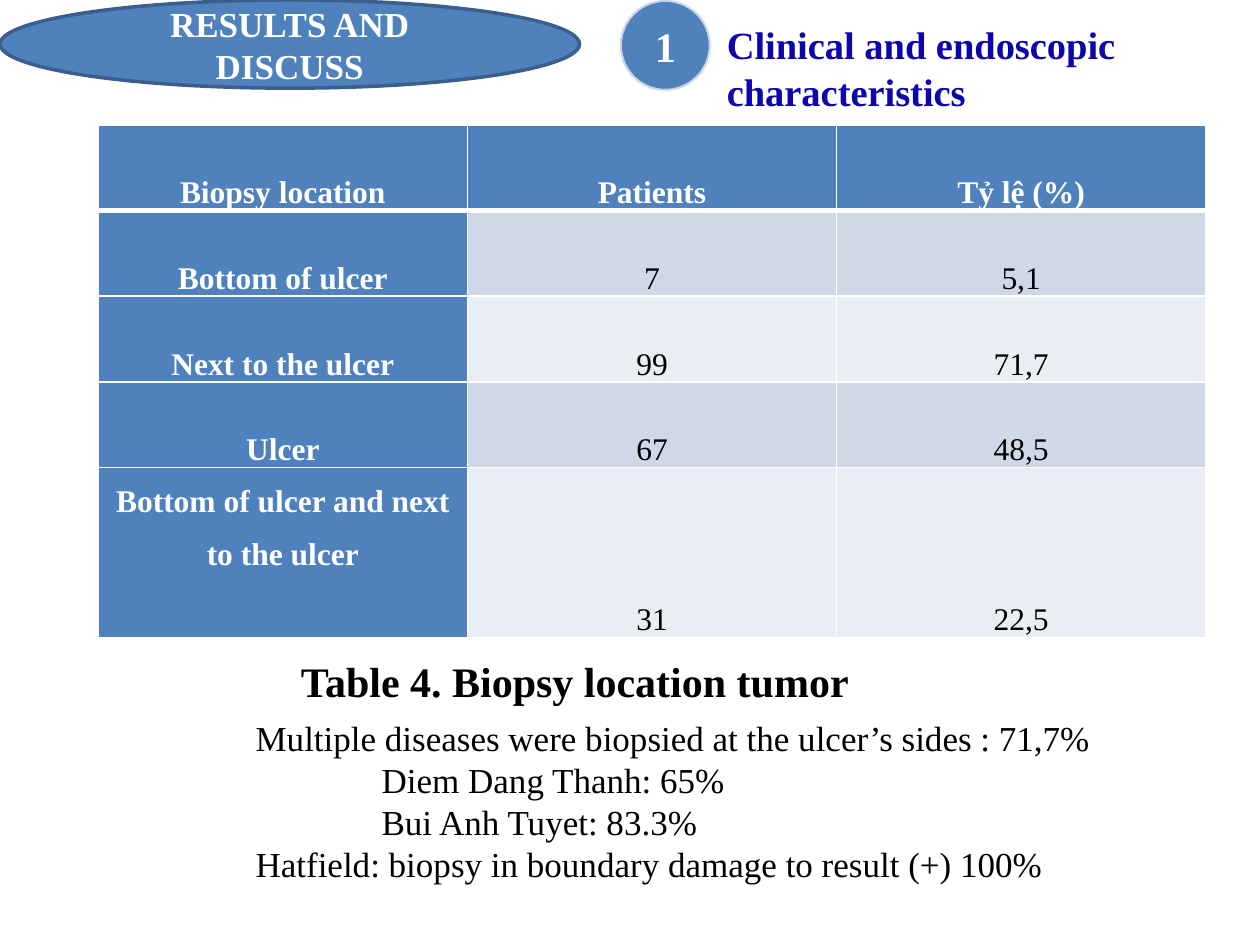
from dataclasses import dataclass, field

from lxml.etree import SubElement
from pptx import Presentation
from pptx.dml.color import RGBColor
from pptx.enum.shapes import MSO_SHAPE as Preset
from pptx.enum.text import MSO_ANCHOR as Anchor, PP_ALIGN as Align
from pptx.oxml.ns import qn
from pptx.util import Inches, Pt

FONT = "Times New Roman"
BLUE, WHITE, BLACK = "4F81BD", "FFFFFF", "000000"
BANDS = ("E9EDF4", "D0D8E8")


@dataclass
class Style:
    size: float
    color: str = BLACK
    bold: bool = False
    paragraph: dict = field(default_factory=dict)


@dataclass
class Block:
    area: tuple
    lines: tuple
    style: Style
    frame: dict = field(default_factory=dict)
    indents: tuple = ()


@dataclass
class Oval:
    block: Block
    line_color: str
    line_width: float
    opacity: int = 100


CENTERED = {"alignment": Align.CENTER}
CELL_SPACING = {**CENTERED, "line_spacing": 1.5, "space_before": Pt(6)}
LABEL = Style(18, WHITE, True, CELL_SPACING)
VALUE = Style(18, BLACK, False, CELL_SPACING)

OVALS = (
    Oval(Block((4.92, 0, 0.72, 0.72), ("1",), Style(24, WHITE, True, CENTERED),
               {"vertical_anchor": Anchor.MIDDLE, "word_wrap": False}),
         "F8F8F8", 2.25, 70),
    Oval(Block((0, 0, 4.6, 0.7), ("RESULTS AND", "DISCUSS"),
               Style(20, WHITE, True, CENTERED),
               {"vertical_anchor": Anchor.MIDDLE, "word_wrap": True}),
         "3A5F8C", 2),
)
TEXTS = (
    Block((2.29, 5.15, 5.98, 0.47), ("Table 4. Biopsy location tumor",),
          Style(24, BLACK, True, {"space_before": Pt(3)})),
    Block((5.67, -0.03, 4.92, 1.21), ("Clinical and endoscopic characteristics",),
          Style(22, "0C04AC", True), {"margin_top": Inches(0.2)}),
    Block((1.93, 5.64, 7.32, 2.46),
          ("Multiple diseases were biopsied at the ulcer’s sides : 71,7%",
           "Diem Dang Thanh: 65%",
           "Bui Anh Tuyet: 83.3%",
           "Hatfield: biopsy in boundary damage to result (+) 100%"),
          Style(20), indents=(0, 1, 1, 0)),
)
ROWS = (
    ("Biopsy location", "Patients", "Tỷ lệ (%)"),
    ("Bottom of ulcer", "7", "5,1"),
    ("Next to the ulcer", "99", "71,7"),
    ("Ulcer", "67", "48,5"),
    ("Bottom of ulcer and next to the ulcer", "31", "22,5"),
)
ROW_HEIGHTS = (0.68, 0.68, 0.68, 0.68, 1.35)
COLUMN_WIDTH = 2.93


def rgb(value: str) -> RGBColor:
    return RGBColor.from_string(value)


def apply(target, values: dict) -> None:
    for name, value in values.items():
        setattr(target, name, value)


def write(frame, lines: tuple, style: Style, indents: tuple = ()) -> None:
    for index, line in enumerate(lines):
        para = frame.paragraphs[0] if index == 0 else frame.add_paragraph()
        apply(para, style.paragraph)
        if indents and indents[index]:
            para._p.get_or_add_pPr().set("marL", str(Inches(indents[index])))
        span = para.add_run()
        span.text = line
        apply(span.font, {"name": FONT, "size": Pt(style.size), "bold": style.bold})
        span.font.color.rgb = rgb(style.color)


def draw_text(page, block: Block) -> None:
    box = page.shapes.add_textbox(*map(Inches, block.area))
    apply(box.text_frame, {"word_wrap": True, **block.frame})
    write(box.text_frame, block.lines, block.style, block.indents)


def draw_oval(page, oval: Oval) -> None:
    block = oval.block
    shape = page.shapes.add_shape(Preset.OVAL, *map(Inches, block.area))
    shape.shadow.inherit = False
    shape.fill.solid()
    shape.fill.fore_color.rgb = rgb(BLUE)
    shape.line.color.rgb = rgb(oval.line_color)
    shape.line.width = Pt(oval.line_width)
    if oval.opacity < 100:
        color = shape.line._ln.find(f"{qn('a:solidFill')}/{qn('a:srgbClr')}")
        SubElement(color, qn("a:alpha")).set("val", str(oval.opacity * 1000))
    apply(shape.text_frame, block.frame)
    write(shape.text_frame, block.lines, block.style)


def add_borders(cell, widths: dict) -> None:
    for side, width in widths.items():
        line = SubElement(cell._tc.get_or_add_tcPr(), qn(f"a:ln{side}"), w=str(Pt(width)))
        fill = SubElement(line, qn("a:solidFill"))
        SubElement(fill, qn("a:srgbClr")).set("val", WHITE)


def draw_table(page) -> None:
    columns = len(ROWS[0])
    area = (0.78, 0.99, COLUMN_WIDTH * columns, sum(ROW_HEIGHTS))
    table = page.shapes.add_table(len(ROWS), columns, *map(Inches, area)).table
    for column in table.columns:
        column.width = Inches(COLUMN_WIDTH)
    for row, (texts, height) in enumerate(zip(ROWS, ROW_HEIGHTS)):
        table.rows[row].height = Inches(height)
        for column, text in enumerate(texts):
            cell = table.cell(row, column)
            heading = row == 0 or column == 0
            tall_label = column == 0 and row == len(ROWS) - 1
            add_borders(cell, {"L": 1, "R": 1, "T": 3 if row == 1 else 1,
                               "B": 3 if row == 0 else 1})
            cell.fill.solid()
            cell.fill.fore_color.rgb = rgb(BLUE if heading else BANDS[row % 2])
            apply(cell, {"margin_left": Inches(0.07), "margin_right": Inches(0.07),
                         "margin_top": 0, "margin_bottom": 0,
                         "vertical_anchor": Anchor.TOP if tall_label else Anchor.BOTTOM})
            write(cell.text_frame, (text,), LABEL if heading else VALUE)


def main() -> None:
    deck = Presentation()
    apply(deck, {"slide_width": Inches(10), "slide_height": Inches(7.5)})
    page = deck.slides.add_slide(deck.slide_layouts[6])
    for oval in OVALS:
        draw_oval(page, oval)
    for block in TEXTS:
        draw_text(page, block)
    draw_table(page)
    deck.save("out.pptx")


if __name__ == "__main__":
    main()
